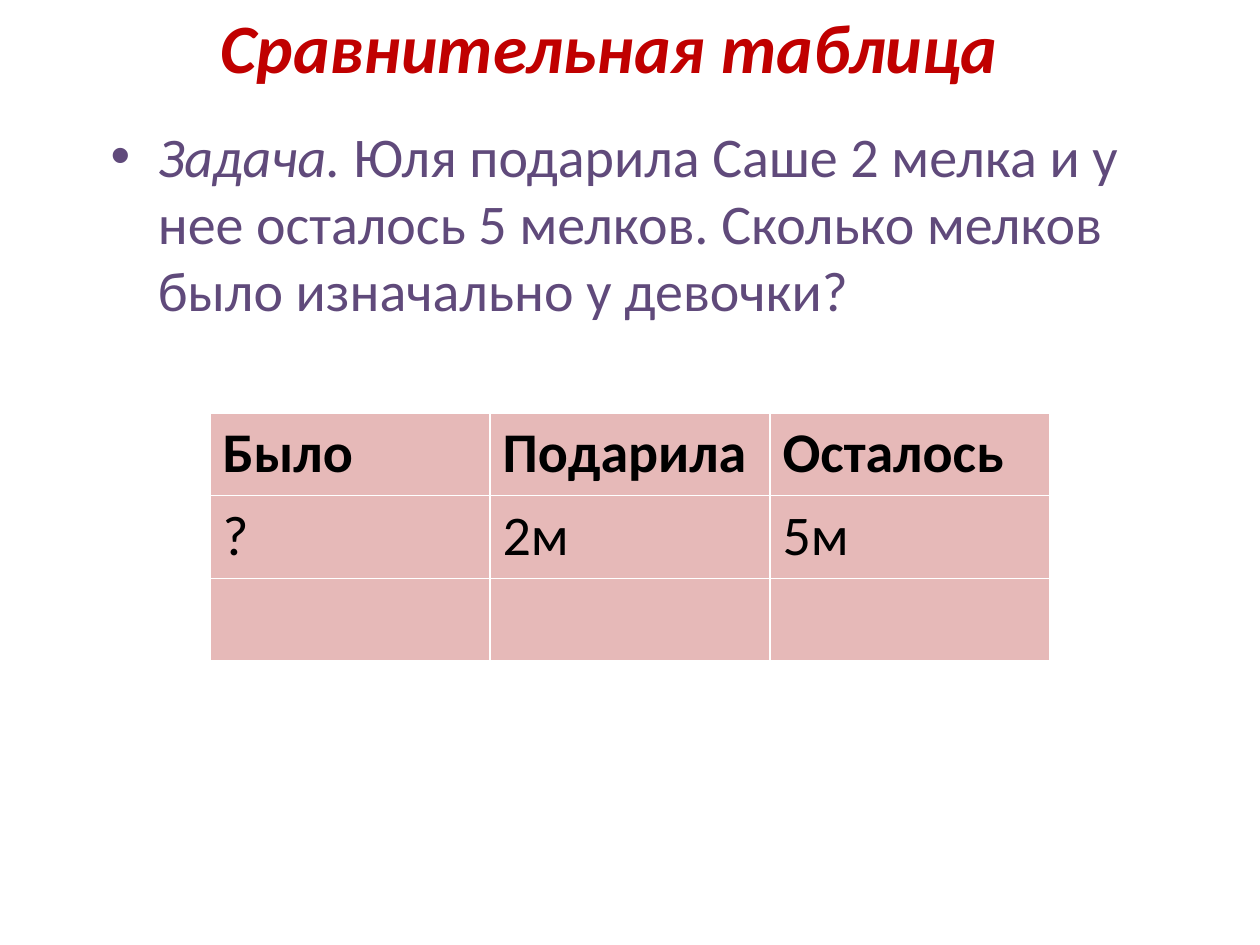
from pptx import Presentation
from pptx import util as u
from pptx.dml.color import RGBColor
from pptx.enum import text

PX = 914400 / 126
FONT = "Calibri"
RED = RGBColor(0xC0, 0x00, 0x00)
PURPLE = RGBColor(0x60, 0x4A, 0x7B)
BLACK = RGBColor(0x00, 0x00, 0x00)
PINK = RGBColor(0xE6, 0xB9, 0xB8)

ROWS = [
    ("Было", "Подарила", "Осталось"),
    ("?", "2м", "5м"),
    ("", "", ""),
]


def px(length):
    return u.Emu(round(length * PX))


def place(part, box):
    part.left, part.top, part.width, part.height = map(px, box)


def style(font, size, color, bold=False, italic=False):
    font.name = FONT
    font.size = u.Pt(size)
    font.color.rgb = color
    font.bold = bold
    font.italic = italic


def add_title(slide, box):
    title = slide.shapes.title
    place(title, box)
    frame = title.text_frame
    frame.text = "Сравнительная таблица"
    frame.auto_size = text.MSO_AUTO_SIZE.NONE
    frame.vertical_anchor = text.MSO_ANCHOR.MIDDLE
    frame.margin_right = px(46)  # the heading sits left of the box centre
    heading = frame.paragraphs[0]
    heading.alignment = text.PP_ALIGN.CENTER
    style(heading.runs[0].font, 39.6, RED, bold=True, italic=True)


def add_problem(slide, box):
    body = slide.placeholders[1]
    place(body, box)
    problem = body.text_frame.paragraphs[0]
    problem.space_before = u.Pt(0)
    parts = [
        ("Задача.", True),
        (" Юля подарила Саше 2 мелка и у нее осталось 5 мелков. "
         "Сколько мелков было изначально у девочки?", False),
    ]
    for wording, italic in parts:
        run = problem.add_run()
        run.text = wording
        style(run.font, 32, PURPLE, italic=italic)


def add_comparison(slide, box):
    """Add the table; its style supplies the white rules between cells."""
    table = slide.shapes.add_table(len(ROWS), len(ROWS[0]), *map(px, box)).table
    for r, row in enumerate(ROWS):
        for c, wording in enumerate(row):
            cell = table.cell(r, c)
            cell.fill.solid()
            cell.fill.fore_color.rgb = PINK
            entry = cell.text_frame.paragraphs[0]
            entry.text = wording
            style(entry.font, 32, BLACK, bold=r == 0)
            for run in entry.runs:
                style(run.font, 32, BLACK, bold=r == 0)


def main():
    deck = Presentation()
    deck.slide_width, deck.slide_height = px(1260), px(945)
    slide = deck.slides.add_slide(deck.slide_layouts[1])
    add_title(slide, (59, 0, 1134, 91))
    add_problem(slide, (98, 115, 1063, 732))
    add_comparison(slide, (210, 413, 840, 248))
    deck.save("out.pptx")


if __name__ == "__main__":
    main()
